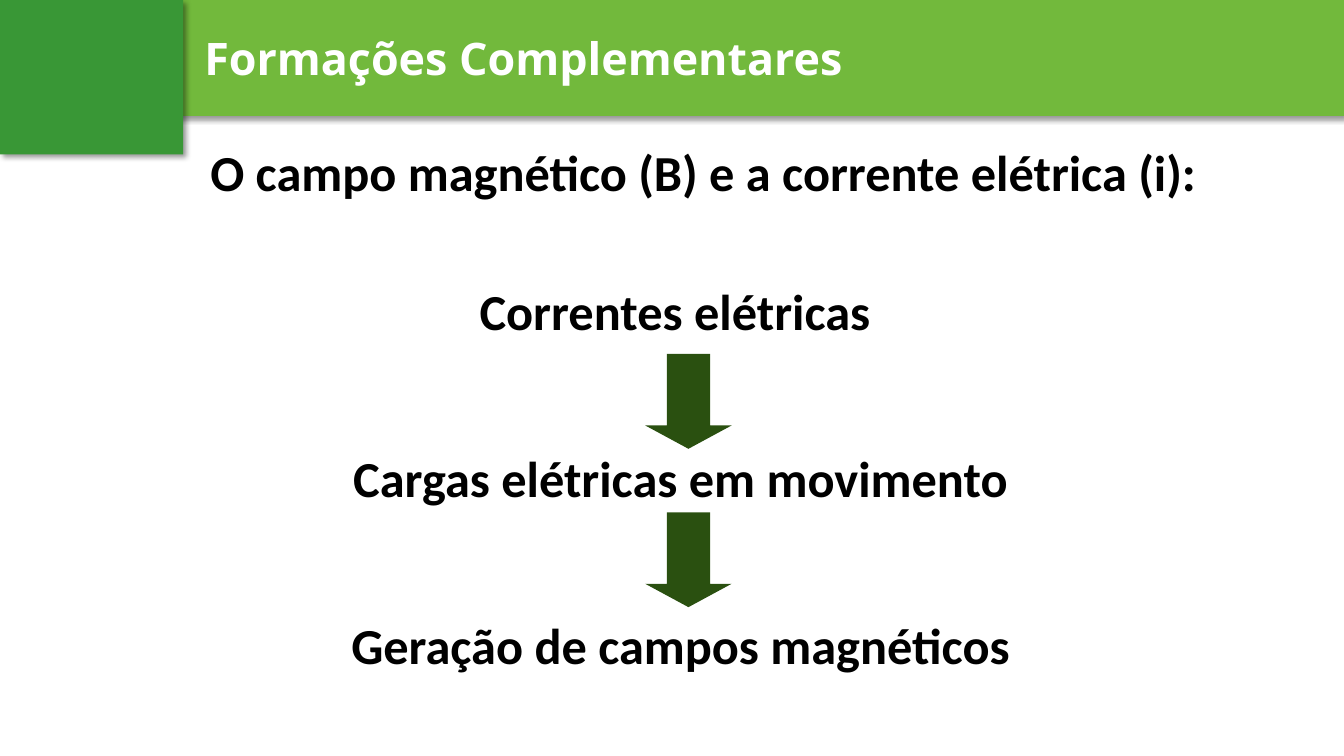
from dataclasses import dataclass

from lxml.etree import SubElement
from pptx import Presentation
from pptx.dml.color import RGBColor as RGB
from pptx.enum.shapes import MSO_SHAPE as SHAPE
from pptx.enum.text import MSO_ANCHOR as ANCHOR, PP_ALIGN as ALIGN
from pptx.oxml.ns import qn
from pptx.util import Cm, Pt


@dataclass(frozen=True)
class Theme:
    bar: str = "72B93C"
    corner: str = "399736"
    arrow: str = "2A5010"
    title: str = "FFFFFF"
    text: str = "000000"
    shadow: str = "000000"
    title_font: str = "Open Sans"
    text_font: str = "Calibri"
    title_size: int = 32
    text_size: int = 36


@dataclass(frozen=True)
class Box:
    left: float
    top: float
    width: float
    height: float

    def cm(self) -> tuple:
        return Cm(self.left), Cm(self.top), Cm(self.width), Cm(self.height)


THEME = Theme()
BAR = Box(3.58, 0, 30.29, 2.92)
CORNER = Box(0, 0, 4.62, 3.89)
TITLE = Box(4.9, 0.64, 27.48, 1.63)
HEADING = Box(5.05, 2.31, 27.25, 4.01)
STEPS = Box(5.05, 6.32, 24.21, 12.6)
ARROWS = [Box(16.26, top, 2.18, 2.39) for top in (8.92, 12.91)]


def add_shadow(props) -> None:
    effects = SubElement(props, qn("a:effectLst"))
    shadow = SubElement(effects, qn("a:outerShdw"), blurRad=str(Pt(4)),
                        dist=str(Pt(3)), dir=str(45 * 60000), algn="tl", rotWithShape="0")
    color = SubElement(shadow, qn("a:srgbClr"), val=THEME.shadow)
    SubElement(color, qn("a:alpha"), val="40000")


def add_block(slide, box: Box, color: str, kind=SHAPE.RECTANGLE, shadow: bool = False):
    s = slide.shapes.add_shape(kind, *box.cm())
    s.fill.solid()
    s.fill.fore_color.rgb = RGB.from_string(color)
    s.line.fill.background()
    if shadow:
        add_shadow(s._element.spPr)
    else:
        s.shadow.inherit = False
    return s


def add_text(slide, box: Box, *lines: str, font: str = THEME.text_font,
             size: int = THEME.text_size, color: str = THEME.text, align=ALIGN.LEFT,
             anchor=ANCHOR.TOP, spacing: float = 1.0, gap: float = 0,
             shadow: bool = False) -> None:
    tf = slide.shapes.add_textbox(*box.cm()).text_frame
    tf.word_wrap = True
    tf.vertical_anchor = anchor
    for i, line in enumerate(lines):
        p = tf.add_paragraph() if i else tf.paragraphs[0]
        p.alignment = align
        p.line_spacing = spacing
        p.space_before = Pt(gap if i else 0)
        r = p.add_run()
        r.text = line
        r.font.size = Pt(size)
        r.font.bold = True
        r.font.color.rgb = RGB.from_string(color)
        if shadow:
            add_shadow(r._r.get_or_add_rPr())
        r.font.name = font


def main() -> None:
    prs = Presentation()
    prs.slide_width, prs.slide_height = Cm(33.87), Cm(19.05)
    slide = prs.slides.add_slide(prs.slide_layouts[6])

    add_block(slide, BAR, THEME.bar, shadow=True)
    add_text(slide, TITLE, "Formações Complementares", font=THEME.title_font,
             size=THEME.title_size, color=THEME.title, shadow=True)
    add_block(slide, CORNER, THEME.corner, shadow=True)

    add_text(slide, HEADING, "O campo magnético (B) e a corrente elétrica (i):",
             anchor=ANCHOR.MIDDLE)
    add_text(slide, STEPS, "Correntes elétricas ", "Cargas elétricas em movimento",
             "Geração de campos magnéticos", align=ALIGN.CENTER, spacing=1.4, gap=59)
    for box in ARROWS:
        s = add_block(slide, box, THEME.arrow, SHAPE.DOWN_ARROW)
        s.adjustments[0] = 0.5
        s.adjustments[1] = 0.27

    prs.save("out.pptx")


if __name__ == "__main__":
    main()
